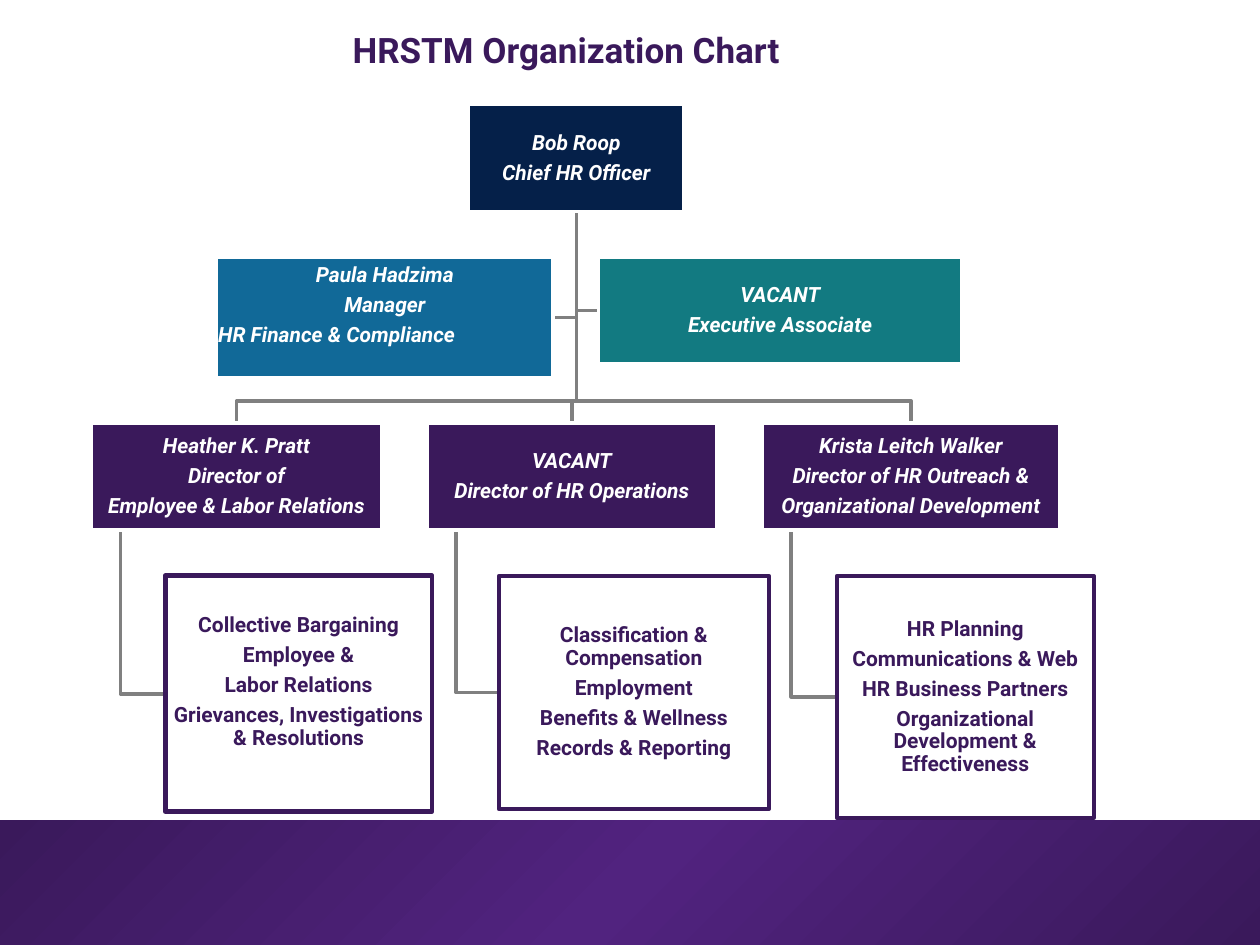
from lxml import etree
from pptx import Presentation, util as u
from pptx.dml.color import RGBColor
from pptx.enum import shapes, text
from pptx.oxml import ns

WHITE = RGBColor(0xFF, 0xFF, 0xFF)
GREY = RGBColor(0x80, 0x80, 0x80)
PURPLE = RGBColor(0x3A, 0x19, 0x5B)
NAVY = RGBColor(0x05, 0x20, 0x49)
BLUE = RGBColor(0x11, 0x69, 0x98)
TEAL = RGBColor(0x12, 0x7A, 0x81)

FONT = "Roboto"
CENTER, LEFT = text.PP_ALIGN.CENTER, text.PP_ALIGN.LEFT

# Boxes are (left, top, width, height) in cm.
CHIEF = (9.45, 2.11, 4.34, 2.16)
FINANCE = (4.37, 5.18, 6.78, 2.44)
AIDE = (12.07, 5.18, 7.32, 2.16)
BUS = 8.08
HEAD_X, HEAD_Y, HEAD_H, STEP = 1.85, 8.53, 2.16, 6.76
UNIT_Y = 11.61

# Head width, head lines, unit (left, width, height), border, foot inset, lines
TEAMS = [
    (5.84, ["Heather K. Pratt", "Director of", "Employee & Labor Relations"],
     (3.33, 5.38, 4.75), 2.75, 0.5,
     ["Collective Bargaining", "Employee &", "Labor Relations",
      "Grievances, Investigations & Resolutions"]),
    (5.84, ["VACANT", "Director of HR Operations"],
     (10.06, 5.44, 4.7), 2.5, 0.03,
     ["Classification & Compensation", "Employment",
      "Benefits & Wellness", "Records & Reporting"]),
    (5.99, ["Krista Leitch Walker", "Director of HR Outreach &",
            "Organizational Development"],
     (16.87, 5.18, 4.88), 2.25, 0.03,
     ["HR Planning", "Communications & Web", "HR Business Partners",
      "Organizational Development & Effectiveness"]),
]


def rect(slide, box):
    shape = slide.shapes.add_shape(shapes.MSO_SHAPE.RECTANGLE, *map(u.Cm, box))
    shape.shadow.inherit = False
    return shape


def style(par, size, color, italic=False):
    par.alignment = CENTER
    font = par.font
    font.name, font.size, font.bold, font.italic = FONT, u.Pt(size), True, italic
    font.color.rgb = color


def card(slide, box, lines, fill, edge=WHITE, width=2, ink=WHITE,
         italic=True, foot=0.03):
    """Draw a filled box with centred lines; foot is the bottom inset in cm."""
    shape = rect(slide, box)
    if fill is None:
        shape.fill.background()
    else:
        shape.fill.solid()
        shape.fill.fore_color.rgb = fill
    shape.line.color.rgb = edge
    shape.line.width = u.Pt(width)
    frame = shape.text_frame
    frame.word_wrap = True
    frame.vertical_anchor = text.MSO_ANCHOR.MIDDLE
    frame.margin_left = frame.margin_right = frame.margin_top = u.Cm(0.03)
    frame.margin_bottom = u.Cm(foot)
    for i, line in enumerate(lines):
        par = frame.add_paragraph() if i else frame.paragraphs[0]
        par.text = line
        par.line_spacing = 0.9
        par.space_after = u.Pt(4.2)
        style(par, 12, ink, italic)
    return shape


def link(slide, *points):
    """Draw an open grey path through points given in cm."""
    start, *rest = [(u.Cm(x), u.Cm(y)) for x, y in points]
    build = slide.shapes.build_freeform(*start)
    build.add_line_segments(rest, close=False)
    shape = build.convert_to_shape()
    shape.shadow.inherit = False
    shape.fill.background()
    shape.line.color.rgb = GREY
    shape.line.width = u.Pt(2)


def footer(slide, box):
    shape = rect(slide, box)
    shape.line.fill.background()
    shape.fill.gradient()
    grad = shape.fill._xPr.find(ns.qn("a:gradFill"))
    for child in list(grad):
        grad.remove(child)
    stops = etree.SubElement(grad, ns.qn("a:gsLst"))
    for pos, color in ((0, "3A195B"), (50, "51237F"), (100, "3A195B")):
        stop = etree.SubElement(stops, ns.qn("a:gs"), pos=str(pos * 1000))
        etree.SubElement(stop, ns.qn("a:srgbClr"), val=color)
    ring = etree.SubElement(grad, ns.qn("a:path"), path="circle")
    etree.SubElement(ring, ns.qn("a:fillToRect"), l="100000", t="100000")


def title(slide, box):
    frame = slide.shapes.add_textbox(*map(u.Cm, box)).text_frame
    frame.word_wrap = True
    frame.margin_left = frame.margin_right = 0
    frame.margin_top = frame.margin_bottom = 0
    par = frame.paragraphs[0]
    par.text = "HRSTM Organization Chart"
    style(par, 20, PURPLE)


def top(slide):
    """Draw the chief, the two aides and the lines between them."""
    left, y, width, height = CHIEF
    root = (left + width / 2, y + height)
    for box, side in ((AIDE, AIDE[0]), (FINANCE, FINANCE[0] + FINANCE[2])):
        mid = box[1] + box[3] / 2
        link(slide, root, (root[0], mid), (side, mid))
    for i, team in enumerate(TEAMS):
        x = HEAD_X + i * STEP + team[0] / 2
        link(slide, root, (root[0], BUS), (x, BUS), (x, HEAD_Y))
    card(slide, CHIEF, ["Bob Roop", "Chief HR Officer"], NAVY)
    fin = card(slide, FINANCE, ["Paula Hadzima", "Manager",
                                "HR Finance & Compliance"], BLUE, foot=0.5)
    fin.text_frame.paragraphs[-1].alignment = LEFT
    card(slide, AIDE, ["VACANT", "Executive Associate"], TEAL)


def team(slide, x, width, head, unit, edge, foot, lines):
    """Draw a director's box at x, its unit box and the elbow between them."""
    left, wide, high = unit
    stem, mid = x + 0.58, UNIT_Y + high / 2
    link(slide, (stem, HEAD_Y + HEAD_H), (stem, mid), (left, mid))
    card(slide, (x, HEAD_Y, width, HEAD_H), head, PURPLE)
    card(slide, (left, UNIT_Y, wide, high), lines, WHITE, PURPLE, edge,
         PURPLE, False, foot)


def main():
    prs = Presentation()
    prs.slide_width, prs.slide_height = u.Cm(25.4), u.Cm(19.05)
    slide = prs.slides.add_slide(prs.slide_layouts[6])
    footer(slide, (0, 16.54, 25.4, 2.51))
    top(slide)
    for i, parts in enumerate(TEAMS):
        team(slide, HEAD_X + i * STEP, *parts)
    title(slide, (1.7, 0.58, 19.43, 0.86))
    prs.save("out.pptx")


if __name__ == "__main__":
    main()
